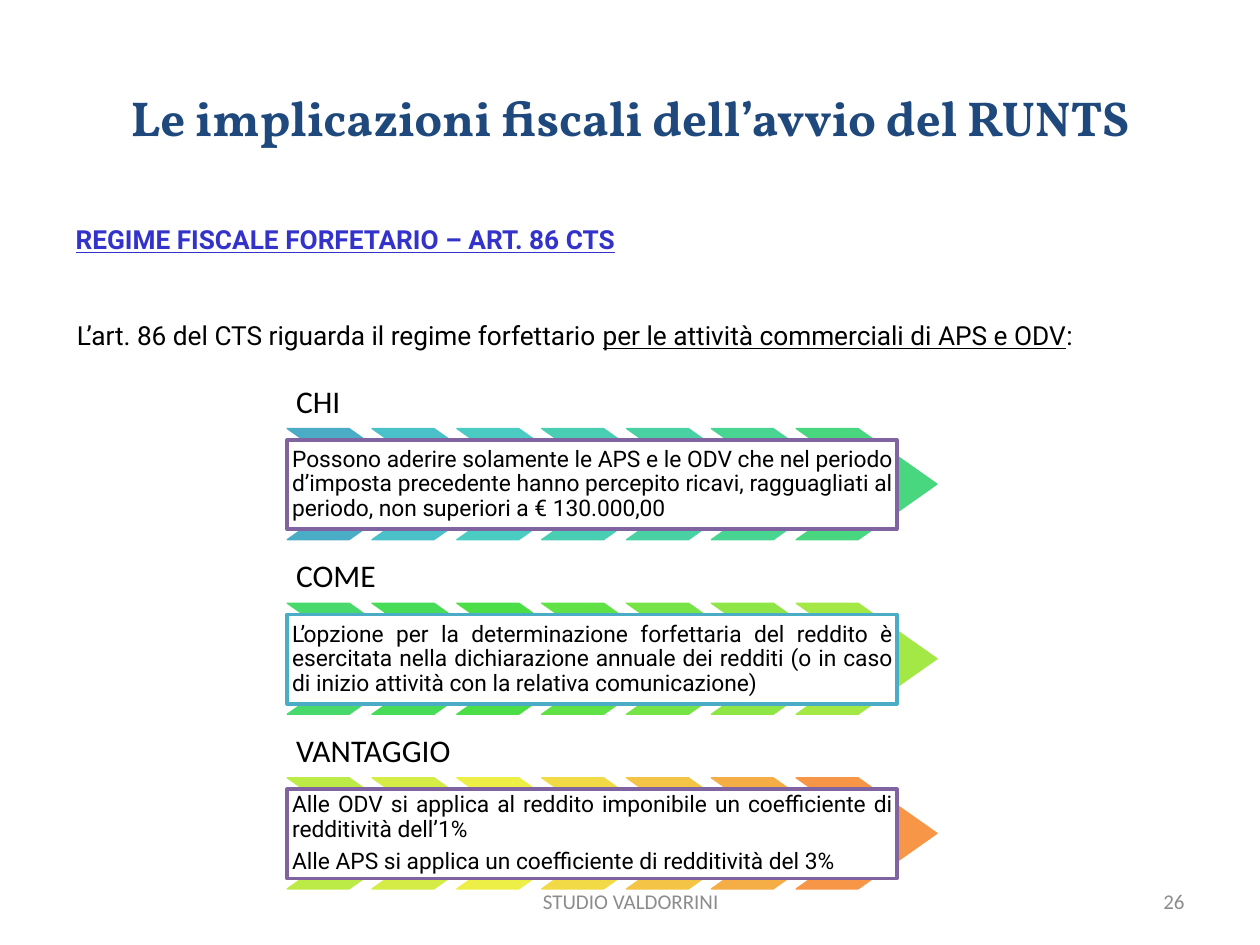
"""Builds the slide on the flat-rate tax regime of article 86 CTS."""
from lxml.etree import SubElement
from pptx import Presentation
from pptx.dml.color import RGBColor
from pptx.enum.shapes import MSO_SHAPE
from pptx.enum.text import MSO_ANCHOR, MSO_AUTO_SIZE, PP_ALIGN
from pptx.oxml.ns import qn
from pptx.util import Cm, Pt

NAVY = RGBColor(0x1F, 0x49, 0x7D)
INDIGO = RGBColor(0x33, 0x33, 0xCC)
BLACK = RGBColor(0x00, 0x00, 0x00)
WHITE = RGBColor(0xFF, 0xFF, 0xFF)
GRAY = RGBColor(0x8C, 0x8C, 0x8C)
PURPLE = RGBColor(0x80, 0x64, 0xA2)
TEAL = RGBColor(0x4B, 0xAC, 0xC6)
RAINBOW = [RGBColor.from_string(code) for code in (
    "4BACC6 4AC0C9 4ACCC3 49CEB3 49D1A3 48D491 48D77E "
    "47D96B 47DC57 4BDE47 60E146 76E346 8DE646 A4E846 "
    "BCEA46 D5EC46 EEEF46 F1DA46 F3C446 F5AD46 F79646").split()]

CHEVRONS_PER_ROW = 7
CHEVRON_STEP = 1.71
ROW_LEFT, ROW_TOP, ROW_STEP = 5.79, 8.64, 3.52
ROWS = [
    ("CHI", PURPLE, [
        "Possono aderire solamente le APS e le ODV che nel periodo d’imposta precedente "
        "hanno percepito ricavi, ragguagliati al periodo, non superiori a € 130.000,00"]),
    ("COME", TEAL, [
        "L’opzione per la determinazione forfettaria del reddito è esercitata nella "
        "dichiarazione annuale dei redditi (o in caso di inizio attività con la relativa "
        "comunicazione)"]),
    ("VANTAGGIO", PURPLE, [
        "Alle ODV si applica al reddito imponibile un coefficiente di redditività dell’1%",
        "Alle APS si applica un coefficiente di redditività del 3%"]),
]


class SlideBuilder:
    """Holds the text styles and the current slide."""

    styles = {
        "title": ({"name": "Vollkorn", "size": Pt(28), "bold": True}, NAVY),
        "heading": ({"name": "Roboto", "size": Pt(15), "bold": True, "underline": True}, INDIGO),
        "intro": ({"name": "Roboto", "size": Pt(15)}, BLACK),
        "link": ({"name": "Roboto", "size": Pt(15), "underline": True}, BLACK),
        "label": ({"name": "Calibri", "size": Pt(18)}, BLACK),
        "detail": ({"name": "Roboto", "size": Pt(13)}, BLACK),
        "footer": ({"name": "Calibri", "size": Pt(12)}, GRAY),
    }

    def __init__(self, deck):
        self.slide = deck.slides.add_slide(deck.slide_layouts[1])

    def fill_text(self, box, paragraphs, anchor=MSO_ANCHOR.TOP, inset=None, **paragraph_format):
        """Fills a box with paragraphs, each a list of (text, style) spans."""
        frame = box.text_frame
        frame_format = {"word_wrap": True, "auto_size": MSO_AUTO_SIZE.NONE,
                        "vertical_anchor": anchor}
        if inset is not None:
            for side in ("left", "top", "right", "bottom"):
                frame_format[f"margin_{side}"] = Cm(inset)
        for name, value in frame_format.items():
            setattr(frame, name, value)
        for index, spans in enumerate(paragraphs):
            para = frame.add_paragraph() if index else frame.paragraphs[0]
            for name, value in paragraph_format.items():
                setattr(para, name, value)
            for text, style in spans:
                span = para.add_run()
                span.text = text
                font_format, color = self.styles[style]
                for name, value in font_format.items():
                    setattr(span.font, name, value)
                span.font.color.rgb = color

    def placeholder(self, index, place, text, style, **options):
        """Moves a template placeholder and fills it without bullets."""
        box = self.slide.placeholders[index]
        for name, value in zip(("left", "top", "width", "height"), place):
            setattr(box, name, Cm(value))
        self.fill_text(box, [[(text, style)]], **options)
        properties = box.text_frame.paragraphs[0]._p.get_or_add_pPr()
        properties.set("marL", "0")
        properties.set("indent", "0")
        SubElement(properties, qn("a:buNone"))

    def text(self, place, spans, **options):
        """Adds a text box with one paragraph."""
        box = self.slide.shapes.add_textbox(*map(Cm, place))
        self.fill_text(box, [spans], **options)

    def shape(self, kind, place, fill, line, line_width):
        """Adds a filled and outlined preset shape."""
        box = self.slide.shapes.add_shape(kind, *map(Cm, place))
        box.shadow.inherit = False
        box.fill.solid()
        box.fill.fore_color.rgb = fill
        box.line.color.rgb = line
        box.line.width = Pt(line_width)
        return box

    def arrow_row(self, top, label, border, details, colors):
        """Adds a label, a band of chevrons and the detail box across it."""
        self.text((ROW_LEFT, top - 1.08, 12.14, 1.09), [(label, "label")],
                  anchor=MSO_ANCHOR.BOTTOM, inset=0.18, line_spacing=0.9, space_after=Pt(6.3))
        for column, color in enumerate(colors):
            place = (ROW_LEFT + column * CHEVRON_STEP, top, 2.84, 2.24)
            chevron = self.shape(MSO_SHAPE.CHEVRON, place, color, color, 0.75)
            chevron.adjustments[0] = 0.71
        box = self.shape(MSO_SHAPE.RECTANGLE, (ROW_LEFT, top + 0.23, 12.29, 1.8),
                         WHITE, border, 2)
        self.fill_text(box, [[(detail, "detail")] for detail in details],
                       anchor=MSO_ANCHOR.MIDDLE, inset=0.1, alignment=PP_ALIGN.JUSTIFY,
                       line_spacing=0.9, space_after=Pt(4.55))


def main():
    deck = Presentation()
    deck.slide_width, deck.slide_height = Cm(25.4), Cm(19.05)
    page = SlideBuilder(deck)
    page.placeholder(0, (1.27, 0.76, 22.86, 3.18), "Le implicazioni fiscali dell’avvio del RUNTS",
                     "title", anchor=MSO_ANCHOR.MIDDLE, alignment=PP_ALIGN.CENTER)
    page.placeholder(1, (1.27, 4.45, 22.86, 12.57), "REGIME FISCALE FORFETARIO – ART. 86 CTS",
                     "heading", alignment=PP_ALIGN.JUSTIFY, line_spacing=0.9, space_before=Pt(3))
    page.text((1.3, 6.32, 21.44, 1.57), [
        ("L’art. 86 del CTS riguarda il regime forfettario ", "intro"),
        ("per le attività commerciali di APS e ODV", "link"),
        (": ", "intro")], alignment=PP_ALIGN.JUSTIFY)
    for index, (label, border, details) in enumerate(ROWS):
        first = index * CHEVRONS_PER_ROW
        page.arrow_row(ROW_TOP + index * ROW_STEP, label, border, details,
                       RAINBOW[first:first + CHEVRONS_PER_ROW])
    page.text((8.69, 17.65, 8.05, 1.02), [("STUDIO VALDORRINI", "footer")],
              anchor=MSO_ANCHOR.MIDDLE, alignment=PP_ALIGN.CENTER)
    page.text((18.21, 17.65, 5.92, 1.02), [("26", "footer")],
              anchor=MSO_ANCHOR.MIDDLE, alignment=PP_ALIGN.RIGHT)
    deck.save("out.pptx")


if __name__ == "__main__":
    main()
